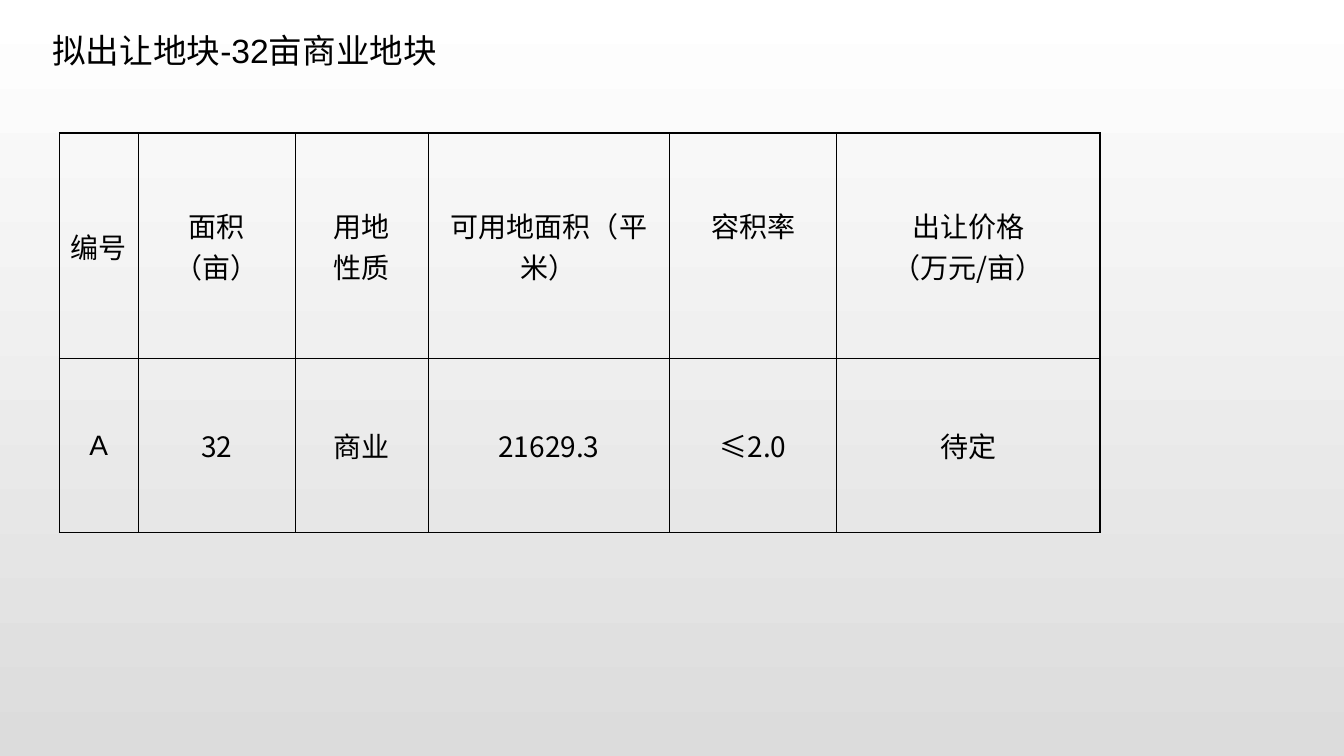
from lxml import etree
from pptx import Presentation
from pptx.dml.color import RGBColor
from pptx.enum.text import MSO_ANCHOR, PP_ALIGN
from pptx.oxml.ns import qn
from pptx.util import Inches, Pt

BLACK = RGBColor(0x00, 0x00, 0x00)
WHITE = RGBColor(0xFF, 0xFF, 0xFF)
GREY = RGBColor(0xDC, 0xDC, 0xDC)
MIDDLE = MSO_ANCHOR.MIDDLE
CENTER = PP_ALIGN.CENTER
SANS = "Arial"
CJK = "Noto Sans CJK SC"

COLUMN_WIDTHS = [0.78, 1.56, 1.32, 2.39, 1.66, 2.61]
ROW_HEIGHTS = [2.24, 1.72]
PLOT_ROWS = [
    [("编号", CJK), ("面积\n（亩）", CJK), ("用地\n性质", SANS),
     ("可用地面积（平米）", CJK), ("容积率", CJK), ("出让价格\n（万元/亩）", CJK)],
    [("A", SANS), ("32", CJK), ("商业", SANS),
     ("21629.3", CJK), ("≤2.0", CJK), ("待定", SANS)],
]


def style_font(paragraph, name, size):
    font = paragraph.font
    font.name = name
    font.size = Pt(size)
    font.bold = False
    font.color.rgb = BLACK


def outline_cell(cell):
    """Draw a thin black line on all four sides of the cell."""
    properties = cell._tc.get_or_add_tcPr()
    for position, side in enumerate(("lnL", "lnR", "lnT", "lnB")):
        line = etree.Element(qn(f"a:{side}"), w=str(Pt(1)))
        fill = etree.SubElement(line, qn("a:solidFill"))
        etree.SubElement(fill, qn("a:srgbClr"), val=str(BLACK))
        properties.insert(position, line)


prs = Presentation()
prs.slide_width = Inches(13.33)
prs.slide_height = Inches(7.5)
slide = prs.slides.add_slide(prs.slide_layouts[6])

backdrop = slide.background.fill
backdrop.gradient()
backdrop.gradient_angle = 270
for stop, color in zip(backdrop.gradient_stops, (WHITE, GREY)):
    stop.color.rgb = color

plots = slide.shapes.add_table(
    len(ROW_HEIGHTS), len(COLUMN_WIDTHS), Inches(0.59), Inches(1.32),
    Inches(sum(COLUMN_WIDTHS)), Inches(sum(ROW_HEIGHTS))).table
plots.first_row = False
plots.horz_banding = False
for column, width in zip(plots.columns, COLUMN_WIDTHS):
    column.width = Inches(width)
for row, height, entries in zip(plots.rows, ROW_HEIGHTS, PLOT_ROWS):
    row.height = Inches(height)
    for cell, (text, font_name) in zip(row.cells, entries):
        cell.text = text
        cell.vertical_anchor = MIDDLE
        cell.fill.background()
        outline_cell(cell)
        for paragraph in cell.text_frame.paragraphs:
            paragraph.alignment = CENTER
            style_font(paragraph, font_name, 20)

# The plot ratio heading sits level with the first line of its neighbours
plots.cell(0, 4).margin_bottom = Inches(0.47)

title = slide.shapes.add_textbox(
    Inches(0.42), Inches(0.25), Inches(4.02), Inches(0.5)).text_frame
title.word_wrap = True
title.text = "拟出让地块-32亩商业地块"
style_font(title.paragraphs[0], SANS, 24)

prs.save("out.pptx")
